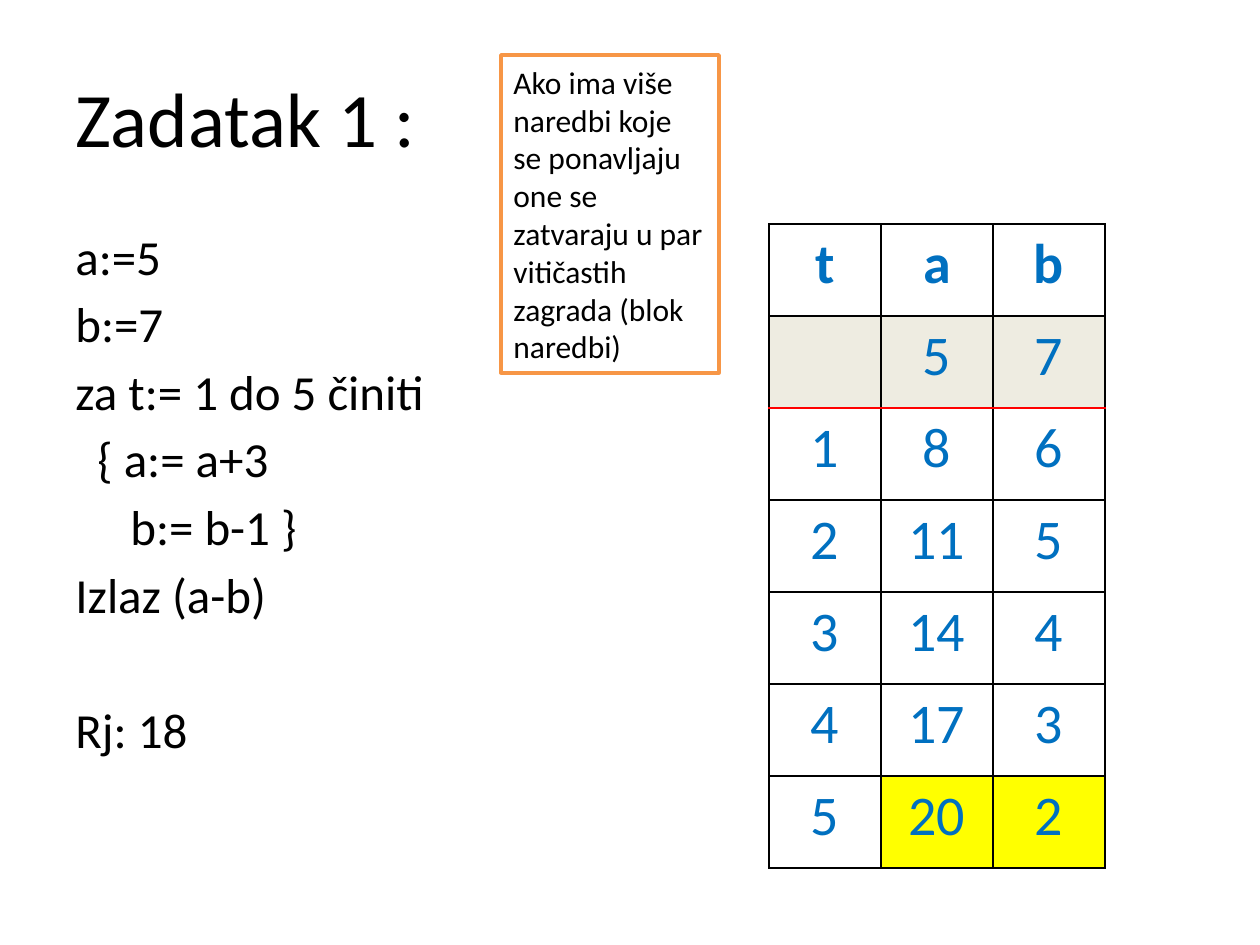
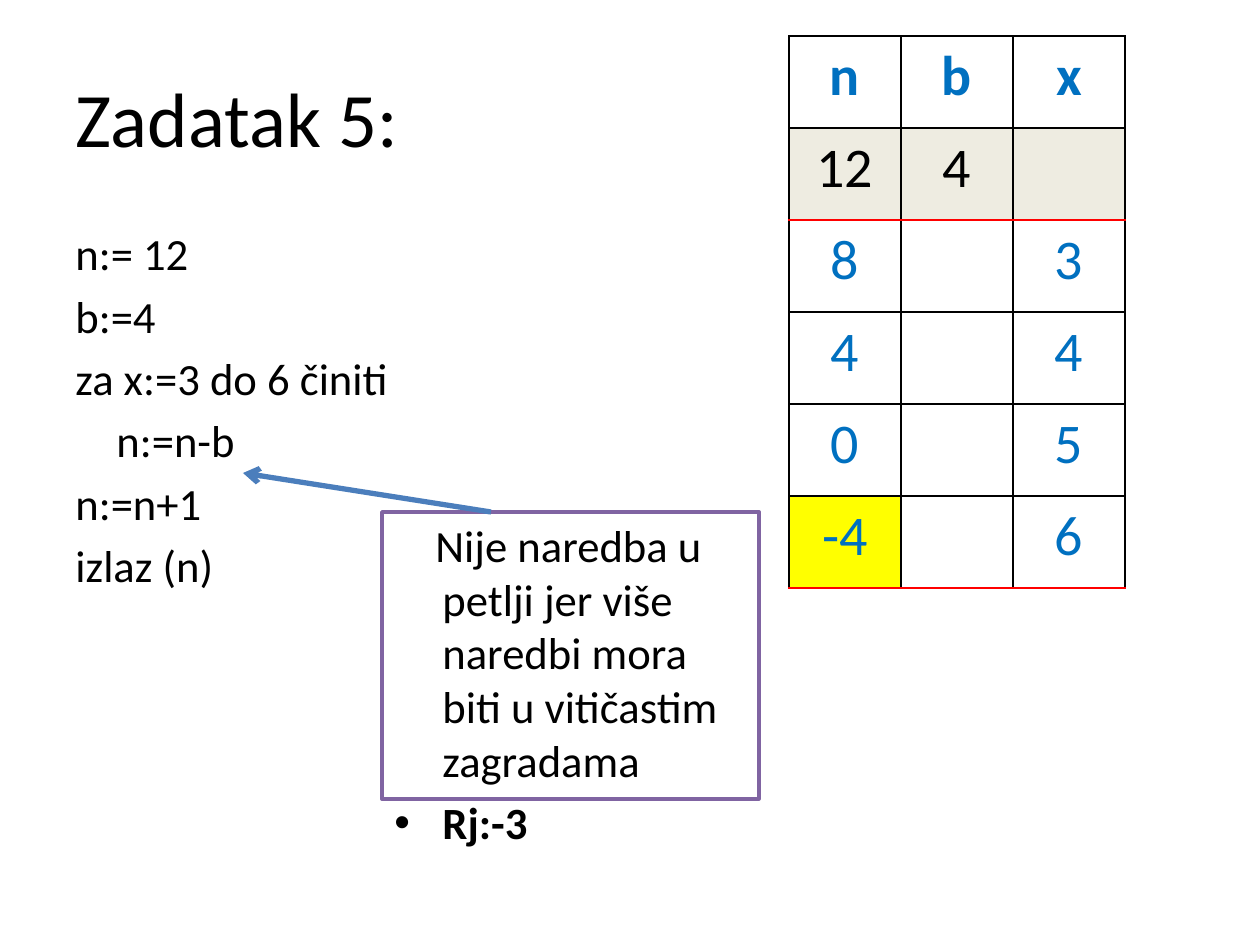
"""Build two slides that trace loop exercises with code, notes and value tables."""
from lxml import etree
from pptx import Presentation
from pptx.dml.color import RGBColor
from pptx.enum.shapes import MSO_CONNECTOR, MSO_SHAPE
from pptx.enum.text import MSO_ANCHOR, PP_ALIGN
from pptx.oxml.ns import qn
from pptx.util import Emu, Pt

TOP, MIDDLE = MSO_ANCHOR.TOP, MSO_ANCHOR.MIDDLE
LEFT, CENTER = PP_ALIGN.LEFT, PP_ALIGN.CENTER
RECTANGLE = MSO_SHAPE.RECTANGLE
STRAIGHT = MSO_CONNECTOR.STRAIGHT

BLACK = RGBColor(0x00, 0x00, 0x00)
WHITE = RGBColor(0xFF, 0xFF, 0xFF)
RED = RGBColor(0xFF, 0x00, 0x00)
YELLOW = RGBColor(0xFF, 0xFF, 0x00)
BEIGE = RGBColor(0xEE, 0xEC, 0xE1)
VALUE_BLUE = RGBColor(0x00, 0x70, 0xC0)
ARROW_BLUE = RGBColor(0x4B, 0x7E, 0xBC)
ORANGE = RGBColor(0xF7, 0x96, 0x46)
PURPLE = RGBColor(0x80, 0x64, 0xA2)

FONT = "Calibri"
COLUMN, ROW = 112, 92
HANG = 48
CODE_GAP = 5


def px(*lengths):
    return [Emu(round(length * 914400 / 126)) for length in lengths]


def write(paragraph, text, size, color=BLACK, bold=False, align=LEFT,
          margin=0, indent=0, before=0):
    run = paragraph.add_run()
    run.text = text
    run.font.color.rgb = color
    for name, value in {"name": FONT, "size": Pt(size), "bold": bold}.items():
        setattr(run.font, name, value)
    for name, value in {"alignment": align, "space_before": Pt(before)}.items():
        setattr(paragraph, name, value)
    properties = paragraph._p.get_or_add_pPr()
    for name, length in {"marL": margin, "indent": indent}.items():
        properties.set(name, str(px(length)[0]))


tasks = [
    {
        "title": "Zadatak 1 :",
        "code_size": 28,
        "code_width": 557,
        "code": [("a:=5", 0, CODE_GAP), ("b:=7", 0, CODE_GAP),
                 ("za t:= 1 do 5 činiti", 0, CODE_GAP),
                 ("{ a:= a+3", 22, CODE_GAP), ("b:= b-1 }", 55, CODE_GAP),
                 ("Izlaz (a-b)", 0, CODE_GAP), ("Rj: 18", 0, 44)],
        "note_box": (501, 55, 218, 318),
        "note_color": ORANGE,
        "note_anchor": MIDDLE,
        "note": [("Ako ima više naredbi koje se ponavljaju one se zatvaraju "
                  "u par vitičastih zagrada (blok naredbi)", {"size": 18})],
        "trace_at": (769, 224),
        "trace": ["t a b".split(), ["", "5", "7"], "1 8 6".split(),
                  "2 11 5".split(), "3 14 4".split(), "4 17 3".split(),
                  "5 20 2".split()],
        "start_color": VALUE_BLUE,
        "results": [(6, 1), (6, 2)],
        "red_below": [1],
    },
    {
        "title": "Zadatak 5:",
        "code_size": 25.5,
        "code_width": 418,
        "code": [("n:= 12", 0, CODE_GAP), ("b:=4", 0, CODE_GAP),
                 ("za x:=3 do 6 činiti", 0, CODE_GAP), ("n:=n-b", 41, CODE_GAP),
                 ("n:=n+1", 0, CODE_GAP), ("izlaz (n)", 0, CODE_GAP)],
        "note_box": (382, 512, 377, 287),
        "note_color": PURPLE,
        "note_anchor": TOP,
        "note": [("Nije naredba u petlji jer više naredbi mora biti u "
                  "vitičastim zagradama",
                  {"size": 25.5, "margin": HANG, "indent": -7, "before": CODE_GAP}),
                 ("Rj:-3", {"size": 25.5, "bold": True, "margin": HANG,
                            "indent": -HANG, "before": CODE_GAP})],
        "bulleted": [1],
        "trace_at": (789, 36),
        "trace": ["n b x".split(), ["12", "4", ""], ["8", "", "3"],
                  ["4", "", "4"], ["0", "", "5"], ["-4", "", "6"]],
        "start_color": BLACK,
        "results": [(5, 0)],
        "red_below": [1, 5],
        "arrow": (491, 512, 243, 473),
    },
]

presentation = Presentation()
presentation.slide_width, presentation.slide_height = px(1260, 945)

for task in tasks:
    slide = presentation.slides.add_slide(presentation.slide_layouts[6])

    title = slide.shapes.add_textbox(*px(63, 38, 1134, 158)).text_frame
    title.word_wrap = True
    title.vertical_anchor = MIDDLE
    write(title.paragraphs[0], task["title"], 44)

    code = slide.shapes.add_textbox(*px(63, 220, task["code_width"], 624)).text_frame
    code.word_wrap = True
    for number, (text, margin, before) in enumerate(task["code"]):
        line = code.add_paragraph() if number else code.paragraphs[0]
        write(line, text, task["code_size"], margin=margin, before=before)

    trace = task["trace"]
    left, top = task["trace_at"]
    table = slide.shapes.add_table(
        len(trace), 3, *px(left, top, 3 * COLUMN, len(trace) * ROW)).table
    table.horz_banding = False
    for column in table.columns:
        column.width = px(COLUMN)[0]
    for row, values in enumerate(trace):
        table.rows[row].height = px(ROW)[0]
        for column, value in enumerate(values):
            cell = table.cell(row, column)
            edges = {"a:lnL": BLACK, "a:lnR": BLACK,
                     "a:lnT": RED if row - 1 in task["red_below"] else BLACK,
                     "a:lnB": RED if row in task["red_below"] else BLACK}
            cell_properties = cell._tc.get_or_add_tcPr()
            for edge, color in edges.items():
                border = etree.SubElement(cell_properties, qn(edge), w=str(Pt(1)))
                paint = etree.SubElement(border, qn("a:solidFill"))
                etree.SubElement(paint, qn("a:srgbClr"), val=str(color))
            cell.fill.solid()
            cell.fill.fore_color.rgb = (
                YELLOW if (row, column) in task["results"]
                else BEIGE if row == 1 else WHITE)
            if value:
                write(cell.text_frame.paragraphs[0], value, 32,
                      color=task["start_color"] if row == 1 else VALUE_BLUE,
                      bold=row == 0, align=CENTER)

    note = slide.shapes.add_shape(RECTANGLE, *px(*task["note_box"]))
    note.shadow.inherit = False
    note.fill.solid()
    note.fill.fore_color.rgb = WHITE
    note.line.color.rgb = task["note_color"]
    note.line.width = Pt(2)
    note.text_frame.word_wrap = True
    note.text_frame.vertical_anchor = task["note_anchor"]
    for number, (text, style) in enumerate(task["note"]):
        line = note.text_frame.add_paragraph() if number else note.text_frame.paragraphs[0]
        write(line, text, **style)
        if number in task.get("bulleted", []):
            bullet_properties = line._p.get_or_add_pPr()
            etree.SubElement(bullet_properties, qn("a:buFont"), typeface="Arial")
            etree.SubElement(bullet_properties, qn("a:buChar"), char="•")

    if "arrow" in task:
        arrow = slide.shapes.add_connector(STRAIGHT, *px(*task["arrow"]))
        arrow.line.color.rgb = ARROW_BLUE
        arrow.line.width = Pt(3)
        etree.SubElement(arrow.line._get_or_add_ln(), qn("a:tailEnd"), type="arrow")
        etree.SubElement(arrow._element.spPr, qn("a:effectLst"))

presentation.save("out.pptx")
